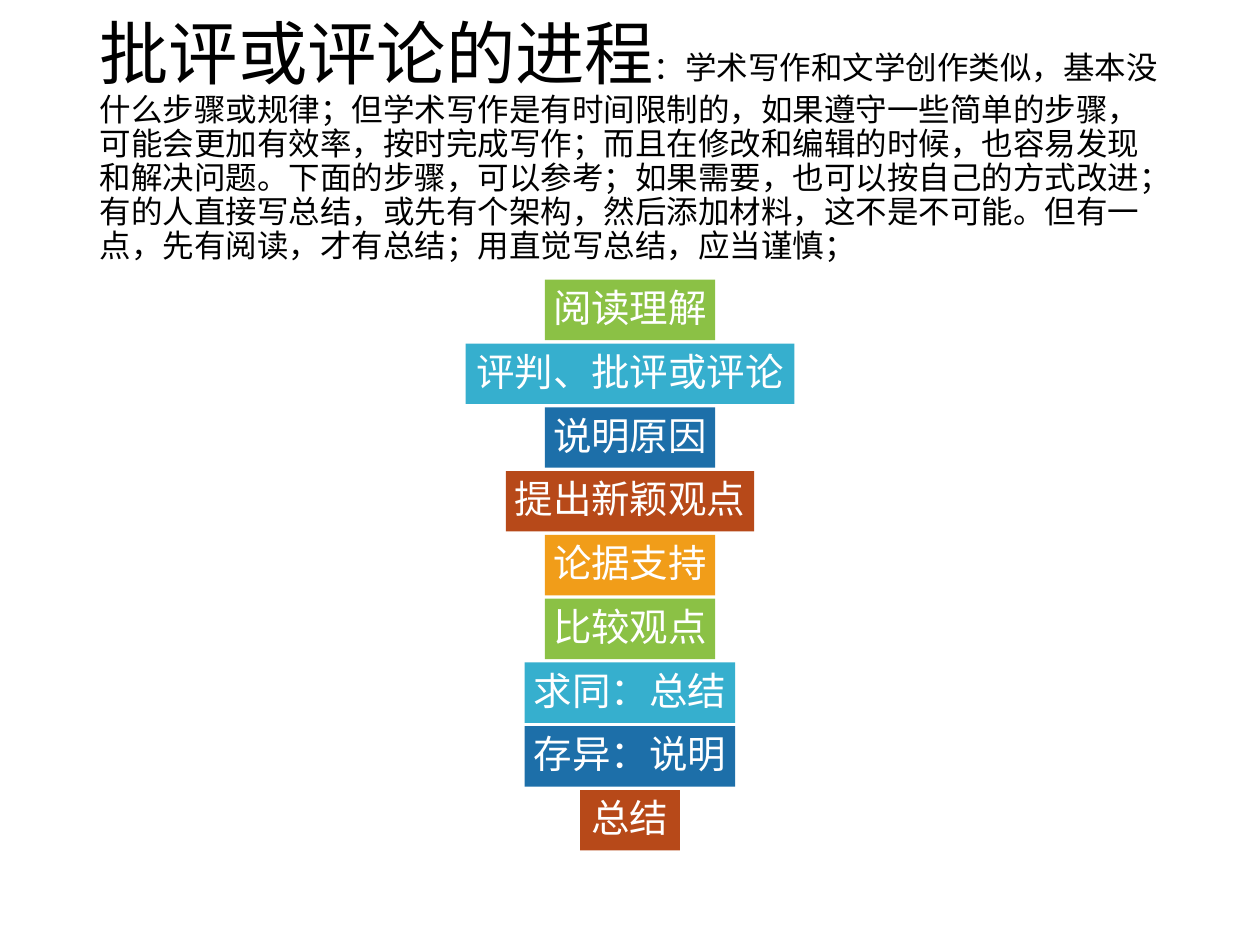
"""Build a slide showing the steps of writing a critique or review."""
from itertools import cycle
from typing import NamedTuple

from pptx import Presentation
from pptx.dml.color import RGBColor
from pptx.enum.shapes import MSO_SHAPE
from pptx.enum.text import MSO_ANCHOR, MSO_AUTO_SIZE, PP_ALIGN
from pptx.util import Inches, Pt

BLACK = RGBColor(0x00, 0x00, 0x00)
WHITE = RGBColor(0xFF, 0xFF, 0xFF)
GREEN = RGBColor(0x8B, 0xC1, 0x45)
TEAL = RGBColor(0x36, 0xAF, 0xCE)
BLUE = RGBColor(0x1D, 0x6F, 0xA9)
RUST = RGBColor(0xB7, 0x49, 0x19)
ORANGE = RGBColor(0xF1, 0x9D, 0x19)

FONT = "Times New Roman"
SLIDE_WIDTH, SLIDE_HEIGHT = Inches(10), Inches(7.5)
FIRST_TOP, ROW_PITCH, ROW_HEIGHT = 29.6, 6.75, 6.4

HEADING = "批评或评论的进程"
INTRODUCTION = (
    "：学术写作和文学创作类似，基本没什么步骤或规律；但学术写作是有时间限制的，"
    "如果遵守一些简单的步骤，可能会更加有效率，按时完成写作；"
    "而且在修改和编辑的时候，也容易发现和解决问题。"
    "下面的步骤，可以参考；如果需要，也可以按自己的方式改进；"
    "有的人直接写总结，或先有个架构，然后添加材料，这不是不可能。"
    "但有一点，先有阅读，才有总结；用直觉写总结，应当谨慎；"
)


class Step(NamedTuple):
    """A step's wording and its width as a percentage of the slide."""

    wording: str
    width: float


STEPS = (
    Step("阅读理解", 13.5),
    Step("评判、批评或评论", 26.1),
    Step("说明原因", 13.5),
    Step("提出新颖观点", 19.7),
    Step("论据支持", 13.5),
    Step("比较观点", 13.5),
    Step("求同：总结", 16.7),
    Step("存异：说明", 16.7),
    Step("总结", 7.9),
)


def across(percent: float) -> int:
    """Return a percentage of the slide's width."""
    return round(SLIDE_WIDTH * percent / 100)


def down(percent: float) -> int:
    """Return a percentage of the slide's height."""
    return round(SLIDE_HEIGHT * percent / 100)


def apply(target, values: dict) -> None:
    """Set each named attribute on the target."""
    for name, value in values.items():
        setattr(target, name, value)


def write(paragraph, wording: str, size: float, color: RGBColor) -> None:
    """Add a run of text to the paragraph."""
    run = paragraph.add_run()
    run.text = wording
    apply(run.font, {"name": FONT, "size": Pt(size)})
    run.font.color.rgb = color


def draw_heading(slide) -> None:
    """Place the heading and its introduction in the title placeholder."""
    title = slide.shapes.title
    apply(title, {"left": across(6.9), "top": down(5.33),
                  "width": across(86.2), "height": down(19.33)})
    apply(title.text_frame, {"vertical_anchor": MSO_ANCHOR.MIDDLE,
                             "word_wrap": True,
                             "auto_size": MSO_AUTO_SIZE.NONE})
    paragraph = title.text_frame.paragraphs[0]
    apply(paragraph, {"alignment": PP_ALIGN.LEFT, "line_spacing": 0.9,
                      "space_before": Pt(0)})
    write(paragraph, HEADING, 39.6, BLACK)
    write(paragraph, INTRODUCTION, 18, BLACK)


def draw_step(slide, step: Step, row: int, color: RGBColor) -> None:
    """Draw one centred step in its row."""
    box = slide.shapes.add_shape(
        MSO_SHAPE.RECTANGLE,
        across((100 - step.width) / 2), down(FIRST_TOP + row * ROW_PITCH),
        across(step.width), down(ROW_HEIGHT))
    box.shadow.inherit = False
    box.fill.solid()
    box.fill.fore_color.rgb = color
    box.line.fill.background()
    margins = ("margin_left", "margin_top", "margin_right", "margin_bottom")
    apply(box.text_frame, dict.fromkeys(margins, Inches(0.06)))
    apply(box.text_frame, {"vertical_anchor": MSO_ANCHOR.MIDDLE,
                           "word_wrap": False})
    paragraph = box.text_frame.paragraphs[0]
    apply(paragraph, {"alignment": PP_ALIGN.CENTER, "line_spacing": 0.9})
    write(paragraph, step.wording, 22, WHITE)


def main() -> None:
    """Build and save the presentation."""
    presentation = Presentation()
    apply(presentation, {"slide_width": SLIDE_WIDTH,
                         "slide_height": SLIDE_HEIGHT})
    slide = presentation.slides.add_slide(presentation.slide_layouts[5])
    draw_heading(slide)
    colors = cycle((GREEN, TEAL, BLUE, RUST, ORANGE))
    for row, (step, color) in enumerate(zip(STEPS, colors)):
        draw_step(slide, step, row, color)
    presentation.save("out.pptx")


if __name__ == "__main__":
    main()
